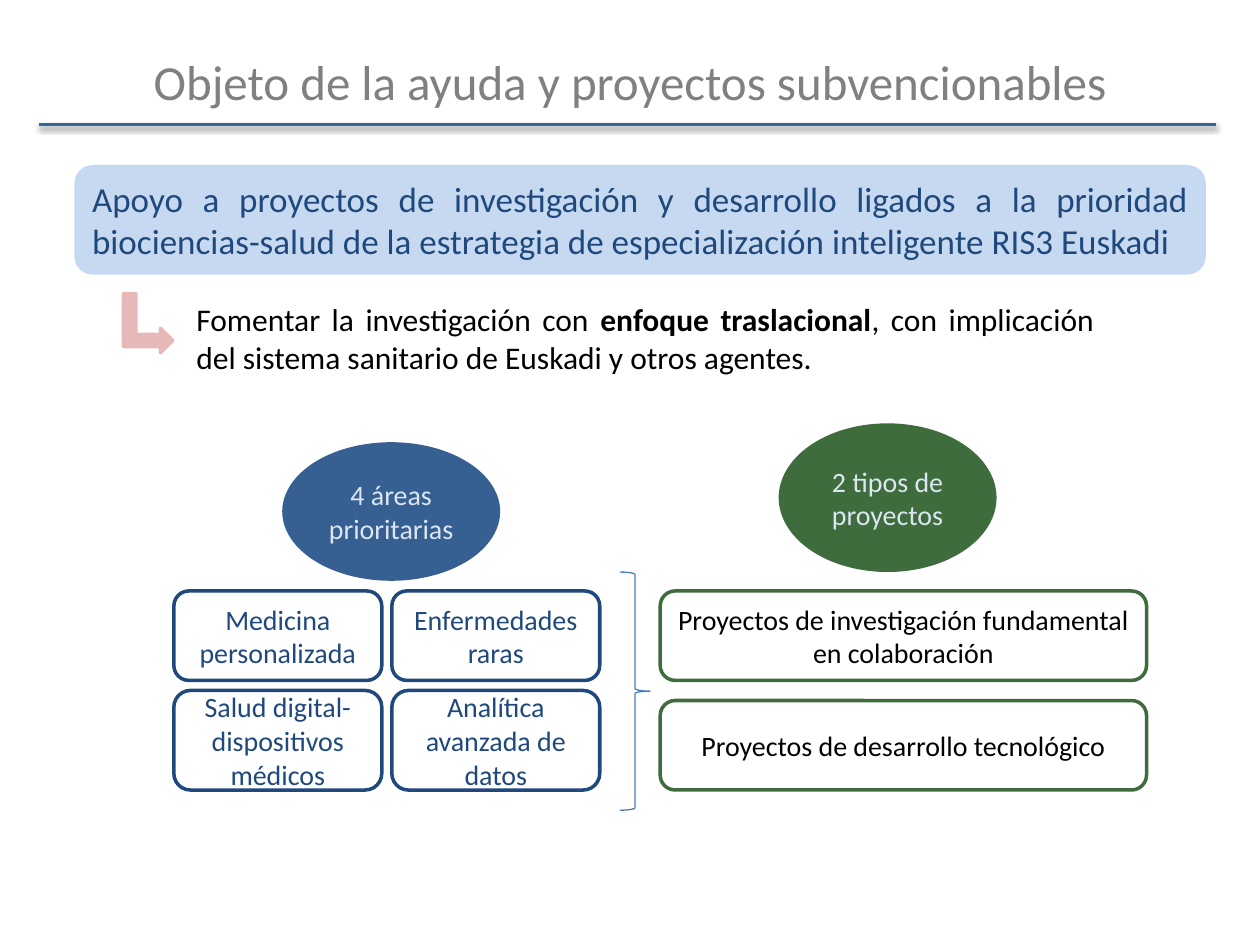
import pptx
import pptx.dml.color
import pptx.enum.shapes
import pptx.enum.text
import pptx.oxml
import pptx.oxml.ns
import pptx.util

Inches, Pt = pptx.util.Inches, pptx.util.Pt
SHAPE = pptx.enum.shapes.MSO_SHAPE
ALIGN = pptx.enum.text.PP_ALIGN
ANCHOR = pptx.enum.text.MSO_ANCHOR

THEME = {
    "font": "Calibri",
    "title": "808080", "rule": "336699",
    "navy": "1F497D", "pale_blue": "C6D9F1",
    "blue": "376092", "green": "3E6C3C", "on_dark": "DCE6F2",
    "black": "000000", "brace": "4B7EBC", "pink": "E6B9B8",
    "title_size": 28, "banner_size": 20, "body_size": 18, "label_size": 16,
}

# Content: text is a list of (wording, bold) runs where emphasis varies
TITLE = "Objeto de la ayuda y proyectos subvencionables"
BANNER = ("Apoyo a proyectos de investigación y desarrollo ligados a la prioridad "
          "biociencias-salud de la estrategia de especialización inteligente RIS3 Euskadi")
AIM = [("Fomentar la investigación con ", False),
       ("enfoque traslacional", True),
       (", con implicación del sistema sanitario de Euskadi y otros agentes.", False)]
HEADINGS = [("4 áreas prioritarias", "blue", (2.24, 3.51, 1.73, 1.1)),
            ("2 tipos de proyectos", "green", (6.18, 3.36, 1.73, 1.18))]
AREAS = [["Medicina personalizada", "Enfermedades raras"],
         ["Salud digital-dispositivos médicos", "Analítica avanzada de datos"]]
PROJECTS = ["Proyectos de investigación fundamental en colaboración",
            "Proyectos de desarrollo tecnológico"]

# Grid of the lower half
GRID_TOP, GRID_BOTTOM, GAP = 4.69, 6.27, 0.08
ROW_HEIGHTS = [0.71, 0.79]
AREA_LEFT, AREA_WIDTH = 1.38, 1.65
PROJECT_LEFT, PROJECT_WIDTH, PROJECT_HEIGHT = 5.24, 3.86, 0.71


def rgb(name):
    return pptx.dml.color.RGBColor.from_string(THEME[name])


def write(part, text, size, color, align=ALIGN.CENTER, anchor=ANCHOR.MIDDLE):
    frame = part.text_frame
    frame.word_wrap = True
    frame.vertical_anchor = anchor
    paragraph = frame.paragraphs[0]
    paragraph.alignment = align
    for wording, bold in [(text, False)] if isinstance(text, str) else text:
        run = paragraph.add_run()
        run.text = wording
        run.font.name = THEME["font"]
        run.font.size = Pt(THEME[size])
        run.font.bold = bold
        run.font.color.rgb = rgb(color)


def add_text(slide, box, *args, **kwargs):
    write(slide.shapes.add_textbox(*map(Inches, box)), *args, **kwargs)


def add_part(slide, kind, box, fill=None, line=None, width=2):
    part = slide.shapes.add_shape(kind, *map(Inches, box))
    part.shadow.inherit = False
    if fill:
        part.fill.solid()
        part.fill.fore_color.rgb = rgb(fill)
    else:
        part.fill.background()
    if line:
        part.line.color.rgb = rgb(line)
        part.line.width = Pt(width)
    else:
        part.line.fill.background()
    return part


def add_rule(slide):
    rule = slide.shapes.add_connector(
        pptx.enum.shapes.MSO_CONNECTOR.STRAIGHT,
        Inches(0.31), Inches(0.99), Inches(9.65), Inches(0.99))
    rule.line.color.rgb = rgb("rule")
    rule.line.width = Pt(2)
    shadow = pptx.oxml.parse_xml(
        f'<a:effectLst {pptx.oxml.ns.nsdecls("a")}>'
        '<a:outerShdw blurRad="40000" dist="20000" dir="5400000" rotWithShape="0">'
        f'<a:srgbClr val="{THEME["black"]}"><a:alpha val="38000"/></a:srgbClr>'
        '</a:outerShdw></a:effectLst>')
    rule._element.spPr.append(shadow)


def main():
    deck = pptx.Presentation()
    deck.slide_width, deck.slide_height = Inches(10), Inches(7.5)
    slide = deck.slides.add_slide(deck.slide_layouts[6])

    # Title and rule
    add_rule(slide)
    add_text(slide, (0.5, 0.3, 9, 0.69), TITLE, "title_size", "title")

    # Banner, and the aim it leads to
    banner = add_part(slide, SHAPE.ROUNDED_RECTANGLE, (0.59, 1.31, 8.98, 0.87), "pale_blue")
    write(banner, BANNER, "banner_size", "navy", ALIGN.JUSTIFY)
    add_text(slide, (1.46, 2.33, 7.32, 0.71), AIM, "body_size", "black",
             ALIGN.JUSTIFY, ANCHOR.TOP)
    arrow = add_part(slide, SHAPE.BENT_UP_ARROW, (0.94, 2.37, 0.47, 0.39), "pink", "pink")
    arrow.rotation = 90

    # Headings
    for heading, color, box in HEADINGS:
        write(add_part(slide, SHAPE.OVAL, box, color), heading, "label_size", "on_dark")

    # Priority areas
    top = GRID_TOP
    for row, height in zip(AREAS, ROW_HEIGHTS):
        for column, area in enumerate(row):
            left = AREA_LEFT + column * (AREA_WIDTH + GAP)
            card = add_part(slide, SHAPE.ROUNDED_RECTANGLE,
                            (left, top, AREA_WIDTH, height), line="navy")
            write(card, area, "label_size", "navy")
        top += height + GAP

    # Project types, spread over the height of the grid
    step = (GRID_BOTTOM - GRID_TOP - PROJECT_HEIGHT) / (len(PROJECTS) - 1)
    for index, project in enumerate(PROJECTS):
        card = add_part(slide, SHAPE.ROUNDED_RECTANGLE,
                        (PROJECT_LEFT, GRID_TOP + index * step,
                         PROJECT_WIDTH, PROJECT_HEIGHT), line="green")
        write(card, project, "label_size", "black")

    # Brace between areas and project types
    add_part(slide, SHAPE.RIGHT_BRACE, (4.92, 4.54, 0.24, 1.89), line="brace", width=0.75)

    deck.save("out.pptx")


if __name__ == "__main__":
    main()
